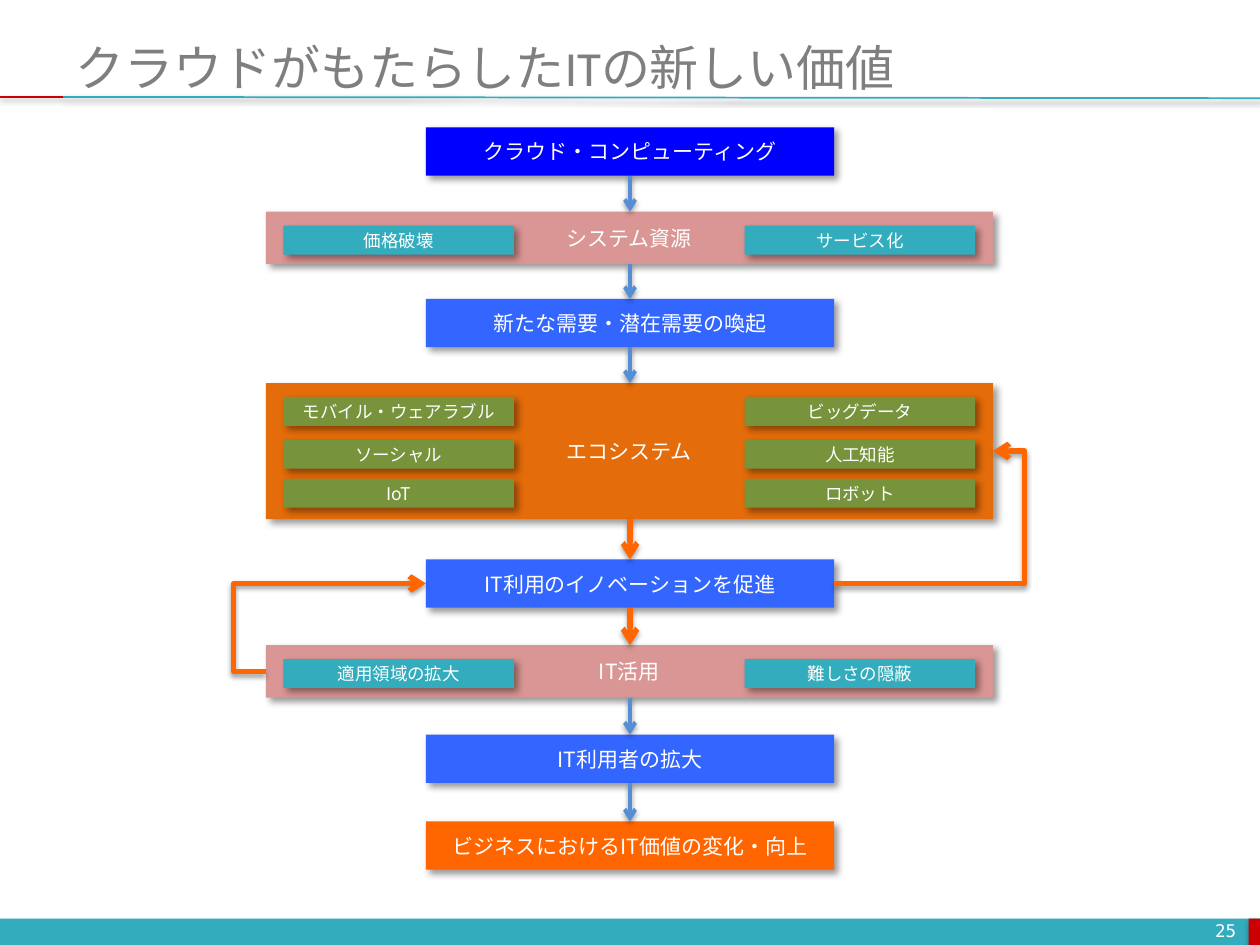
from lxml import etree
from pptx import Presentation
from pptx.dml.color import RGBColor
from pptx.enum.shapes import MSO_CONNECTOR, MSO_SHAPE
from pptx.enum.text import MSO_ANCHOR, MSO_AUTO_SIZE, PP_ALIGN
from pptx.oxml.ns import qn
from pptx.util import Inches, Pt

RECT = MSO_SHAPE.RECTANGLE
LINE, BENT = MSO_CONNECTOR.STRAIGHT, MSO_CONNECTOR.ELBOW
MIDDLE = MSO_ANCHOR.MIDDLE
LEFT, CENTER, RIGHT = PP_ALIGN.LEFT, PP_ALIGN.CENTER, PP_ALIGN.RIGHT

WHITE = RGBColor(0xFF, 0xFF, 0xFF)
GRAY = RGBColor(0x7F, 0x7F, 0x7F)
BLACK = RGBColor(0, 0, 0)
TEAL = RGBColor(0x33, 0xAC, 0xBD)
RED = RGBColor(0xCC, 0, 0)
PINK = RGBColor(0xD9, 0x96, 0x94)
NAVY = RGBColor(0, 0, 0xFF)
BLUE = RGBColor(0x33, 0x66, 0xFF)
SKY = RGBColor(0x55, 0x8E, 0xD5)
RUST = RGBColor(0xE4, 0x6C, 0x0A)
ORANGE = RGBColor(0xFF, 0x66, 0)
GREEN = RGBColor(0x77, 0x93, 0x3C)

SANS, MONO, LATIN = "Noto Sans CJK JP", "DejaVu Sans Mono", "Calibri"
WIDTH, HEIGHT = Inches(10), Inches(7.5)
COL, ROW = WIDTH / 100, HEIGHT / 100

NODE_X, NODE_W, NODE_H = 33.8, 32.4, 5.11
PANEL_X, PANEL_W, PANEL_H = 21.1, 57.7, 5.55
CHIP_W, CHIP_H, CHIP_PAD = 18.3, 3.07, 1.4
CHIP_ROWS = (1.47, 6, 10.13)
ARROW_BEND = 0.2

STEPS = [
    ("クラウド・コンピューティング", NAVY, 13.47, NODE_H, []),
    ("システム資源", PINK, 22.4, PANEL_H, [("価格破壊", "サービス化")]),
    ("新たな需要・潜在需要の喚起", BLUE, 31.63, NODE_H, []),
    ("エコシステム", RUST, 40.53, 14.4,
     [("モバイル・ウェアラブル", "ビッグデータ"),
      ("ソーシャル", "人工知能"), ("IoT", "ロボット")]),
    ("IT利用のイノベーションを促進", BLUE, 59.2, NODE_H, []),
    ("IT活用", PINK, 68.27, PANEL_H, [("適用領域の拡大", "難しさの隠蔽")]),
    ("IT利用者の拡大", BLUE, 77.73, NODE_H, []),
    ("ビジネスにおけるIT価値の変化・向上", ORANGE, 86.93, NODE_H, []),
]
ECO, NEW, USE = 3, 4, 5


def place(x, y, w, h):
    return [round(v) for v in (x * COL, y * ROW, w * COL, h * ROW)]


def write(frame, text, size, color, font, align):
    frame.text = text
    frame.word_wrap = True
    frame.auto_size = MSO_AUTO_SIZE.NONE
    frame.vertical_anchor = MIDDLE
    frame.margin_top = frame.margin_bottom = 0
    para = frame.paragraphs[0]
    para.alignment = align
    run = para.runs[0]
    run.font.size = Pt(size)
    run.font.color.rgb = color
    run.font.name = font
    if font == SANS:
        etree.SubElement(run.font._element, qn("a:ea"), typeface=font)


def shade(item, blur, dist, angle, alpha):
    props = item._element.spPr
    effects = etree.SubElement(props, qn("a:effectLst"))
    outer = etree.SubElement(
        effects, qn("a:outerShdw"), blurRad=str(Pt(blur)), dist=str(Pt(dist)),
        dir=str(angle * 60000), algn="tl", rotWithShape="0")
    tint = etree.SubElement(outer, qn("a:srgbClr"), val=str(BLACK))
    etree.SubElement(tint, qn("a:alpha"), val=str(alpha * 1000))


def bar(slide, box, color):
    shape = slide.shapes.add_shape(RECT, *place(*box))
    shape.fill.solid()
    shape.fill.fore_color.rgb = color
    shape.line.fill.background()
    return shape


def block(slide, box, color, text, size):
    shape = bar(slide, box, color)
    shade(shape, 4, 3, 45, 40)
    write(shape.text_frame, text, size, WHITE, SANS, CENTER)


def rule(slide, start, end, color, width, kind=LINE):
    ends = [round(v) for x, y in (start, end) for v in (x * COL, y * ROW)]
    line = slide.shapes.add_connector(kind, *ends)
    line.line.color.rgb = color
    line.line.width = Pt(width)
    return line


def arrow(slide, start, end, color, width, bend=None):
    line = rule(slide, start, end, color, width, LINE if bend is None else BENT)
    props = line._element.spPr
    etree.SubElement(props.find(qn("a:ln")), qn("a:tailEnd"), type="arrow")
    shade(line, 3.1, 1.6, 90, 38)
    if bend is not None:
        guides = props.find(qn("a:prstGeom")).find(qn("a:avLst"))
        etree.SubElement(guides, qn("a:gd"), name="adj1",
                         fmla=f"val {round(bend * 100000)}")


def header(slide, box):
    x, y, w, h = box
    base = y + h + 0.13
    rule(slide, (x, base), (x + w, base + 0.13), TEAL, 1)
    rule(slide, (0, base), (x, base), RED, 1)
    title = slide.shapes.title
    title.left, title.top, title.width, title.height = place(*box)
    write(title.text_frame, "クラウドがもたらしたITの新しい価値",
          28, GRAY, LATIN, LEFT)


def footer(slide, box):
    x, y, w, h = box
    bar(slide, box, TEAL)
    bar(slide, (x + w - 0.9, y, 0.9, h), RED)
    number = slide.shapes.add_textbox(*place(x + w - 24.2, y - 0.2, 23.3, h + 0.2))
    write(number.text_frame, "25", 10, WHITE, MONO, RIGHT)


def step(slide, box, color, text, pairs):
    x, y, w, h = box
    block(slide, box, color, text, 12)
    fill = GREEN if len(pairs) > 1 else TEAL
    sides = (x + CHIP_PAD, x + w - CHIP_PAD - CHIP_W)
    for drop, pair in zip(CHIP_ROWS, pairs):
        for side, label in zip(sides, pair):
            block(slide, (side, y + drop, CHIP_W, CHIP_H), fill, label, 10)


def flow(slide):
    boxes = []
    for text, color, y, h, pairs in STEPS:
        x, w = (PANEL_X, PANEL_W) if pairs else (NODE_X, NODE_W)
        boxes.append((x, y, w, h))
        step(slide, boxes[-1], color, text, pairs)
    for i, (above, below) in enumerate(zip(boxes, boxes[1:])):
        color, width = (ORANGE, 3) if i in (ECO, NEW) else (SKY, 2.25)
        arrow(slide, (50, above[1] + above[3]), (50, below[1]), color, width)
    west = [(x, y + h / 2) for x, y, w, h in boxes]
    east = [(x + w, y + h / 2) for x, y, w, h in boxes]
    arrow(slide, east[NEW], east[ECO], ORANGE, 3, 1 + ARROW_BEND)
    arrow(slide, west[USE], west[NEW], ORANGE, 3, -ARROW_BEND)


def main():
    deck = Presentation()
    deck.slide_width, deck.slide_height = WIDTH, HEIGHT
    slide = deck.slides.add_slide(deck.slide_layouts[5])
    footer(slide, (0, 97.2, 100, 2.8))
    header(slide, (5, 4, 95, 6.13))
    flow(slide)
    deck.save("out.pptx")


if __name__ == "__main__":
    main()
